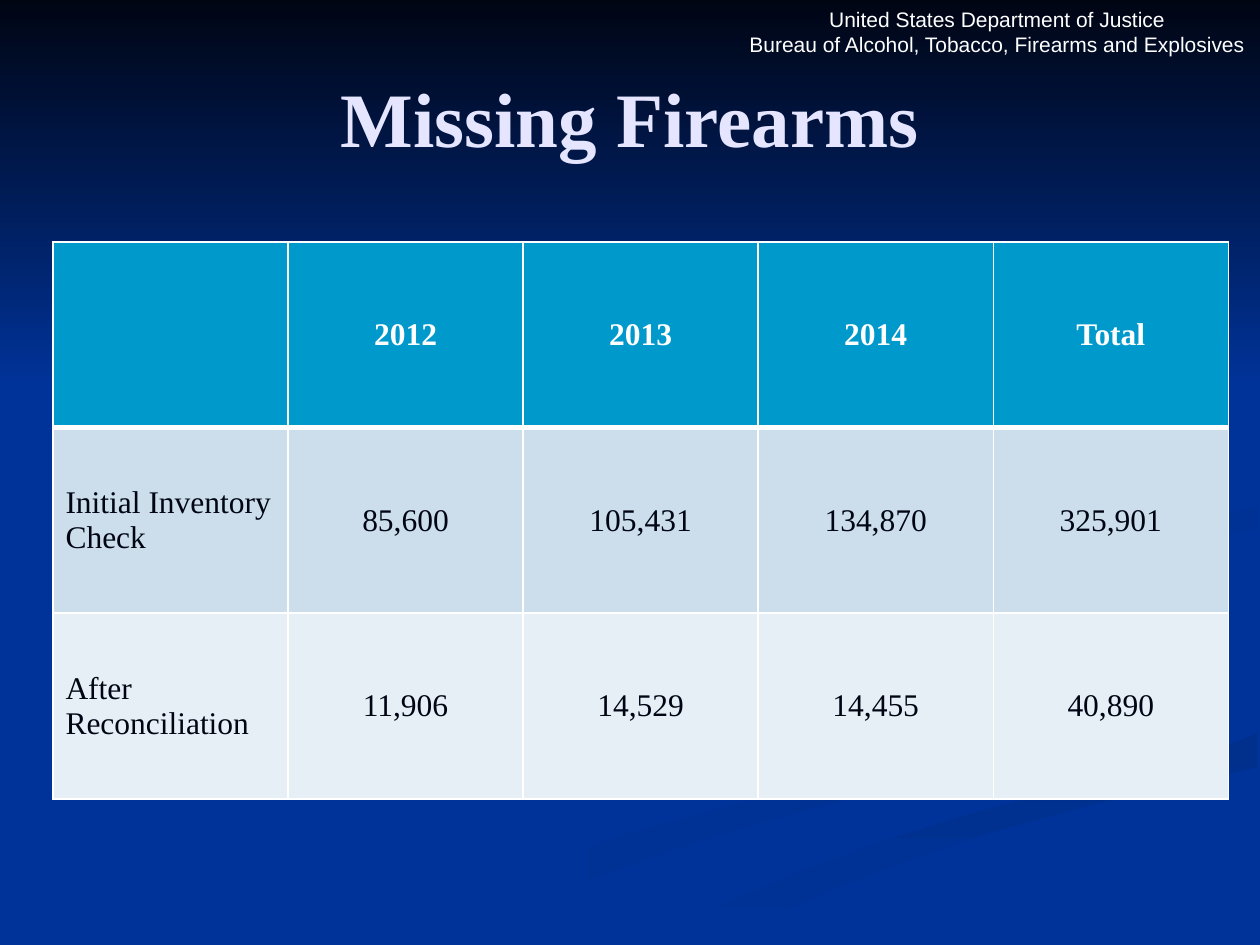
from dataclasses import dataclass

from lxml.etree import SubElement
from pptx import Presentation
from pptx.dml.color import RGBColor
from pptx.enum.text import MSO_ANCHOR, PP_ALIGN
from pptx.oxml.ns import qn
from pptx.util import Inches, Pt


@dataclass(frozen=True)
class Theme:
    back: str = "003399"
    night: str = "000514"
    white: str = "FFFFFF"
    lilac: str = "E5E5FF"
    header: str = "0099CC"
    bands: tuple = ("CCDEEC", "E7EFF6")
    serif: str = "Times New Roman"
    sans: str = "Arial"
    title_size: int = 44
    cell_size: int = 18
    agency_size: int = 12
    rule: int = 1
    header_rule: int = 3


class Deck:
    def __init__(self, theme):
        self.theme = theme
        self.prs = Presentation()
        self.prs.slide_width, self.prs.slide_height = Inches(10), Inches(7.5)
        self.s = self.prs.slides.add_slide(self.prs.slide_layouts[5])
        fill = self.s.background.fill
        fill.solid()
        fill.fore_color.rgb = RGBColor.from_string(theme.back)

    def fill_text(self, tf, lines, font, size, color, bold=False,
                  align=PP_ALIGN.CENTER, anchor=MSO_ANCHOR.MIDDLE):
        tf.word_wrap = True
        tf.vertical_anchor = anchor
        values = {"name": font, "size": Pt(size), "bold": bold}
        for i, line in enumerate(lines):
            p = tf.paragraphs[0] if i == 0 else tf.add_paragraph()
            p.alignment = align
            r = p.add_run()
            r.text = line
            for name, value in values.items():
                setattr(r.font, name, value)
            r.font.color.rgb = RGBColor.from_string(color)

    def outline(self, points, colors, angle=0):
        pts = [(Inches(x), Inches(y)) for x, y in points]
        builder = self.s.shapes.build_freeform(*pts[0], scale=1.0)
        builder.add_line_segments(pts[1:], close=True)
        sp = builder.convert_to_shape()
        sp.shadow.inherit = False
        sp.line.fill.background()
        if len(colors) == 1:
            sp.fill.solid()
            sp.fill.fore_color.rgb = RGBColor.from_string(colors[0])
            return
        sp.fill.gradient()
        sp.fill.gradient_angle = -angle % 360
        for stop, color in zip(sp.fill.gradient_stops, colors):
            stop.color.rgb = RGBColor.from_string(color)

    def title(self, text, left, top, width, height):
        sp = self.s.shapes.title
        box = {"left": left, "top": top, "width": width, "height": height}
        for name, value in box.items():
            setattr(sp, name, Inches(value))
        self.s.shapes._spTree.append(sp._element)
        t = self.theme
        self.fill_text(sp.text_frame, [text], t.serif, t.title_size, t.lilac, True)

    def text(self, lines, left, top, width, height):
        sp = self.s.shapes.add_textbox(*map(Inches, (left, top, width, height)))
        tf = sp.text_frame
        tf.margin_left = tf.margin_right = 0
        t = self.theme
        self.fill_text(tf, lines, t.sans, t.agency_size, t.white,
                       anchor=MSO_ANCHOR.BOTTOM)

    def borders(self, cell, top, bottom):
        tc_pr = cell._tc.get_or_add_tcPr()
        rule = self.theme.rule
        for side, width in zip("LRTB", (rule, rule, top, bottom)):
            ln = SubElement(tc_pr, qn(f"a:ln{side}"), w=str(Pt(width)))
            solid = SubElement(ln, qn("a:solidFill"))
            SubElement(solid, qn("a:srgbClr"), val=self.theme.white)

    def table(self, rows, left, top, width, height):
        t = self.theme
        table = self.s.shapes.add_table(
            len(rows), len(rows[0]), *map(Inches, (left, top, width, height))).table
        for i, row in enumerate(rows):
            head = i == 0
            fill = t.header if head else t.bands[(i - 1) % len(t.bands)]
            for j, value in enumerate(row):
                cell = table.cell(i, j)
                self.borders(cell, t.header_rule if i == 1 else t.rule,
                             t.header_rule if head else t.rule)
                cell.fill.solid()
                cell.fill.fore_color.rgb = RGBColor.from_string(fill)
                if value:
                    self.fill_text(cell.text_frame, [value], t.serif, t.cell_size,
                                   t.white if head else t.night, head,
                                   PP_ALIGN.CENTER if j else PP_ALIGN.LEFT)
                cell.vertical_anchor = MSO_ANCHOR.MIDDLE


LEFT_RIBBON = [
    (7.81, 5.53), (7.57, 5.43), (7.15, 5.28), (6.61, 5.13), (6.26, 5.02),
    (5.94, 4.85), (5.79, 4.73), (5.75, 4.59), (5.7, 4.72), (5.86, 4.87),
    (6.11, 4.99), (6.79, 5.19), (7.28, 5.35), (7.62, 5.47), (7.81, 5.56),
    (7.86, 5.66), (7.8, 5.79), (7.59, 5.9), (7.14, 6.05), (6.52, 6.2),
    (5.79, 6.39), (4.99, 6.61), (4.17, 6.9), (3.38, 7.27), (3, 7.49),
    (3.61, 7.49), (4.31, 7.14), (4.99, 6.87), (5.64, 6.65), (6.51, 6.4),
    (7.4, 6.18), (7.8, 6.05), (7.95, 5.92), (8, 5.81), (7.95, 5.67)]
MIDDLE_RIBBON = [
    (9.43, 5.7), (9.35, 5.57), (9.19, 5.47), (8.88, 5.35), (8.3, 5.19),
    (7.74, 5.03), (7.45, 4.9), (7.3, 4.79), (7.24, 4.64), (7.27, 4.79),
    (7.39, 4.94), (7.66, 5.12), (7.97, 5.24), (8.38, 5.36), (8.8, 5.49),
    (9.07, 5.62), (9.18, 5.81), (9.11, 5.93), (8.94, 6.05), (9.25, 5.93),
    (9.41, 5.81)]
LOWER_BAND = [
    (5.19, 7.47), (5.03, 7.49), (5.71, 7.49), (6, 7.33), (6.3, 7.19),
    (6.7, 7.02), (7.22, 6.82), (7.85, 6.61), (8.61, 6.4), (9.49, 6.2),
    (9.98, 6.09), (9.98, 5.81), (9.76, 5.9), (9.36, 6.02), (8.67, 6.2),
    (7.97, 6.38), (7.64, 6.47), (6.96, 6.69), (6.3, 6.93), (5.69, 7.19)]
WIDE_RIBBON = [
    (7.25, 4.64), (7.34, 4.83), (7.59, 4.98), (7.93, 5.09), (8.51, 5.24),
    (9.05, 5.4), (9.31, 5.53), (9.43, 5.7), (9.4, 5.83), (9.26, 5.93),
    (8.92, 6.05), (8.43, 6.18), (7.8, 6.34), (7.04, 6.55), (6.19, 6.84),
    (5.26, 7.24), (4.77, 7.49), (5.03, 7.49), (5.19, 7.47), (5.7, 7.19),
    (6.3, 6.93), (6.96, 6.69), (7.65, 6.47), (8.32, 6.29), (9.04, 6.1),
    (9.51, 5.98), (9.86, 5.87), (9.99, 5.81), (9.99, 5.38), (9.59, 5.31),
    (9.04, 5.19), (8.48, 5.03), (8.04, 4.85), (7.86, 4.73), (7.81, 4.63),
    (7.92, 4.47), (8.22, 4.34), (8.65, 4.24), (9.33, 4.15), (9.99, 4.02),
    (9.99, 3.87), (9.42, 3.99), (8.74, 4.08), (8.08, 4.17), (7.7, 4.27),
    (7.42, 4.39), (7.3, 4.49)]
RIGHT_RIBBON = [
    (7.81, 4.6), (7.82, 4.69), (7.91, 4.78), (8.06, 4.87), (8.26, 4.96),
    (8.12, 4.87), (8.05, 4.76), (8.09, 4.66), (8.28, 4.53), (8.59, 4.43),
    (8.96, 4.35), (9.54, 4.26), (9.98, 4.2), (9.98, 4.02), (9.67, 4.09),
    (8.98, 4.18), (8.49, 4.27), (8.1, 4.37), (7.91, 4.47)]
UPPER_RIBBON = [
    (6.83, 4.3), (7.39, 4.21), (7.86, 4.12), (8.25, 4.02), (8.55, 3.91),
    (8.76, 3.78), (8.89, 3.62), (8.94, 3.44), (8.9, 3.24), (8.73, 2.99),
    (8.43, 2.75), (7.99, 2.5), (7.62, 2.33), (8.05, 2.54), (8.46, 2.79),
    (8.7, 2.99), (8.85, 3.2), (8.89, 3.35), (8.82, 3.54), (8.61, 3.7),
    (8.3, 3.82), (7.63, 3.98), (6.76, 4.14), (6.25, 4.26), (5.97, 4.37),
    (5.8, 4.51), (5.78, 4.68), (5.9, 4.84), (6.22, 5), (6.01, 4.85),
    (5.93, 4.7), (6.01, 4.56), (6.24, 4.44)]
TOP_SHADE = [(0, 0), (0, 3.08), (10, 3.08), (10, 0)]

ROWS = [
    ("", "2012", "2013", "2014", "Total"),
    ("Initial Inventory Check", "85,600", "105,431", "134,870", "325,901"),
    ("After Reconciliation", "11,906", "14,529", "14,455", "40,890")]


def main():
    theme = Theme()
    deck = Deck(theme)
    backdrop = [
        (LEFT_RIBBON, (theme.back, "003193"), 0),
        (MIDDLE_RIBBON, (theme.back, "003193"), 45),
        (LOWER_BAND, ("002F8C", theme.back), 90),
        (WIDE_RIBBON, (theme.back,), 0),
        (RIGHT_RIBBON, ("003091", theme.back), 45),
        (UPPER_RIBBON, ("002F8E", theme.back), 45),
        (TOP_SHADE, (theme.night, theme.back), 90)]
    for points, colors, angle in backdrop:
        deck.outline(points, colors, angle)
    deck.text(["United States Department of Justice",
               "Bureau of Alcohol, Tobacco, Firearms and Explosives"],
              5.83, 0.06, 4.17, 0.44)
    deck.title("Missing Firearms", 0.5, 0.3, 9, 1.25)
    deck.table(ROWS, 0.42, 1.92, 9.33, 4.42)
    deck.prs.save("out.pptx")


if __name__ == "__main__":
    main()
